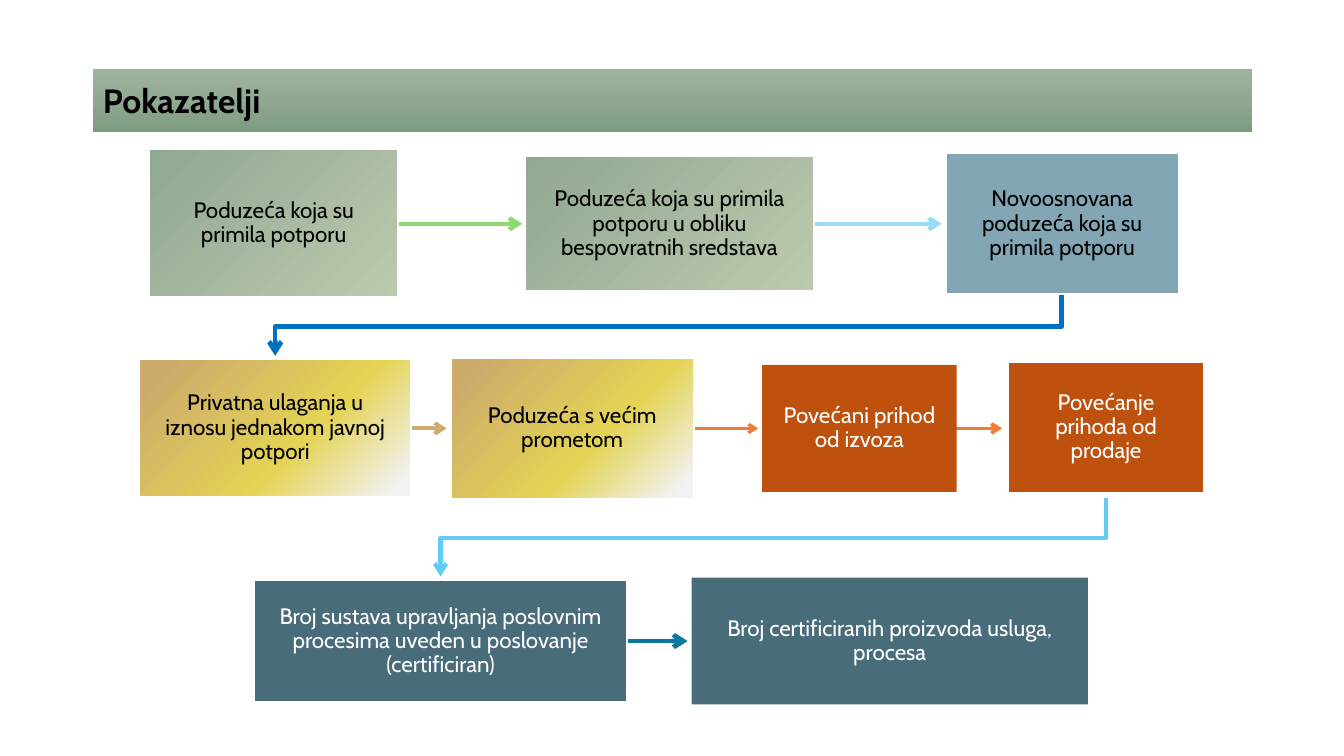
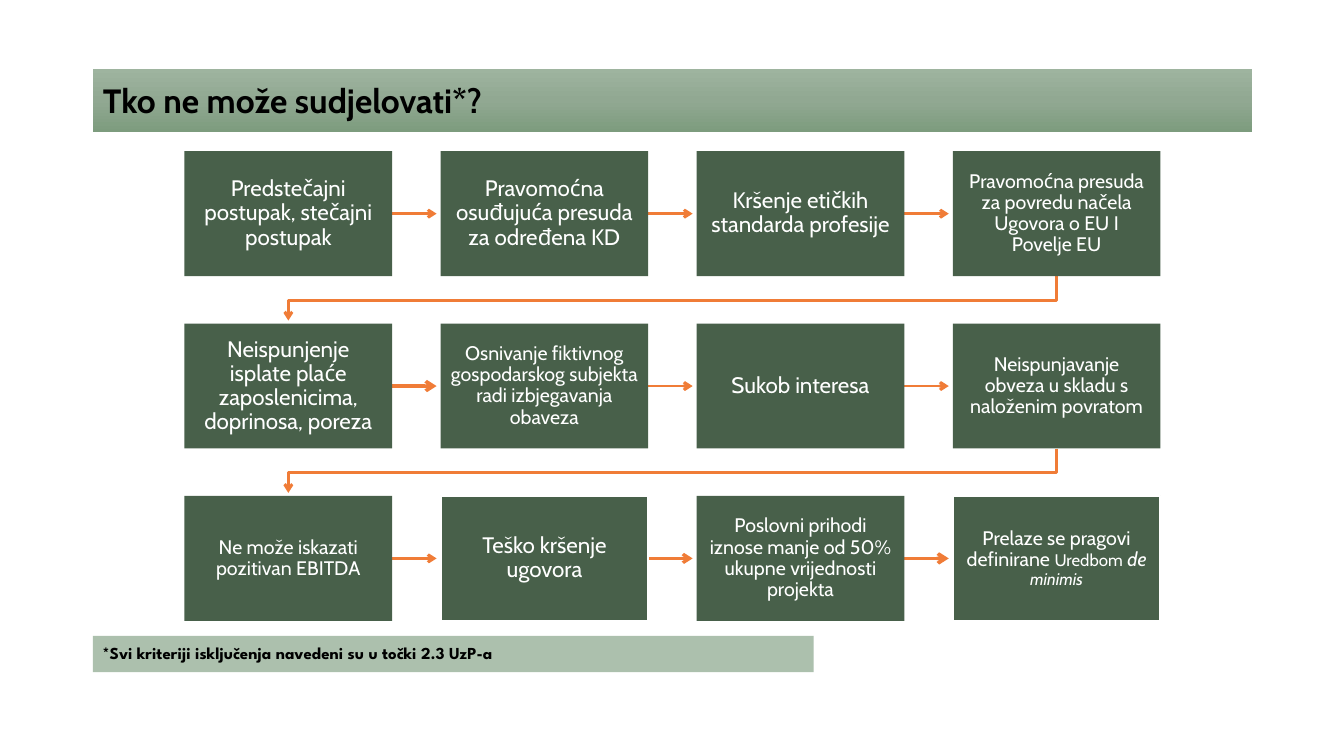
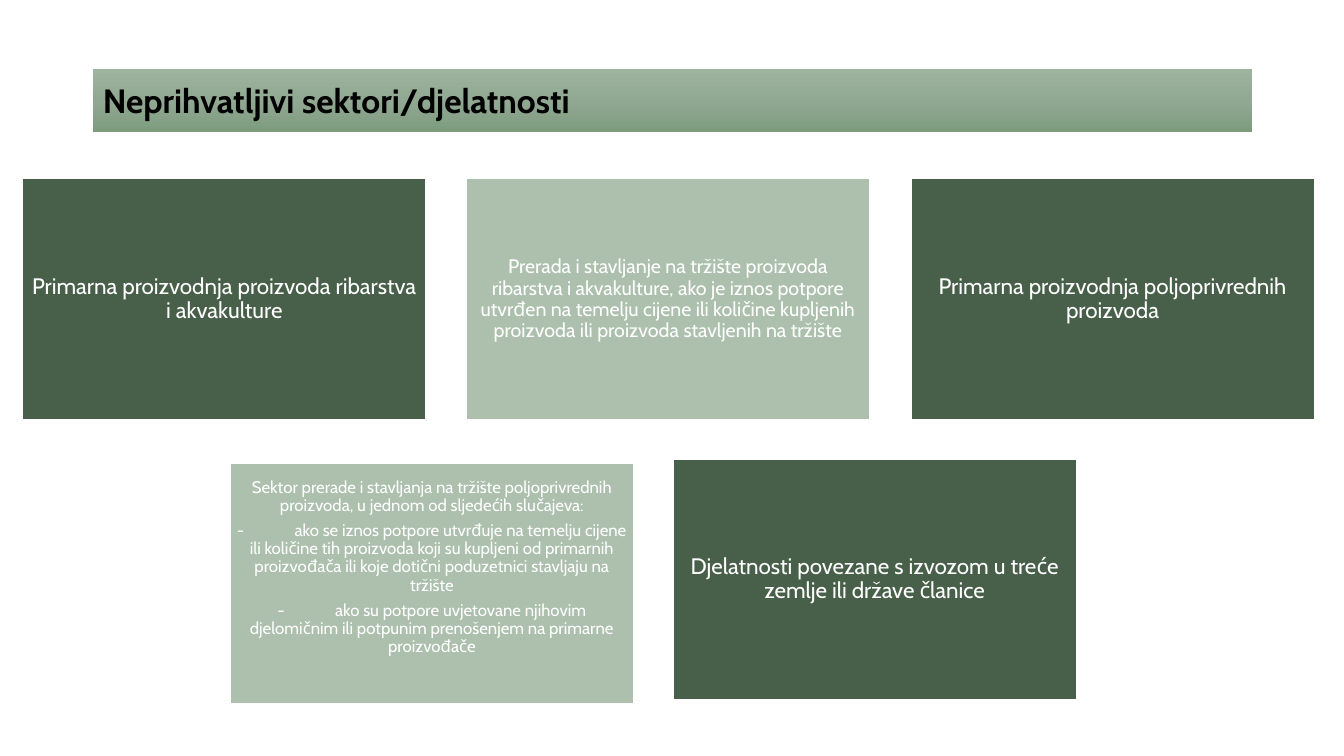
from lxml import etree
from pptx import Presentation
from pptx.dml.color import RGBColor
from pptx.enum.shapes import MSO_CONNECTOR, MSO_SHAPE
from pptx.enum.text import MSO_ANCHOR, MSO_AUTO_SIZE, PP_ALIGN
from pptx.oxml.ns import qn
from pptx.util import Inches, Pt

RECTANGLE = MSO_SHAPE.RECTANGLE
STRAIGHT = MSO_CONNECTOR.STRAIGHT
MIDDLE = MSO_ANCHOR.MIDDLE
NO_AUTOFIT = MSO_AUTO_SIZE.NONE
LEFT, CENTER = PP_ALIGN.LEFT, PP_ALIGN.CENTER

# Shared colours and gradients
BLACK, WHITE = "000000", "FFFFFF"
DARK_GREEN, LIGHT_GREEN = "48604A", "ACC0AD"
ORANGE, RUST, SLATE, BLUE_GREY = "F07C37", "BE510E", "496C7B", "83A6B5"
TITLE_BAND = (90, [(0, "9EB49F"), (50, "91A892"), (100, "7D9C7E")])
SAGE = (45, [(0, "91A892"), (100, "BCCAAE")])
GOLD = (45, [(9, "CDAC6B"), (60, "E4D354"), (94, "F2F2F2")])

TITLE_ONLY = 5
TITLE_BOX = (0.92, 0.68, 11.5, 0.63)
BODY_FONT, NOTE_FONT = "Cabin", "League Spartan"


def rgb(value):
    return RGBColor.from_string(value)


def set_attributes(target, values):
    for name, value in values.items():
        setattr(target, name, value)


def set_fill(shape, fill):
    """Fill with a hex colour, or with (clockwise angle, stops)."""
    if isinstance(fill, str):
        shape.fill.solid()
        shape.fill.fore_color.rgb = rgb(fill)
        return
    angle, stops = fill
    shape.fill.gradient()
    shape.fill.gradient_angle = (360 - angle) % 360
    stop_list = shape.element.spPr.find(".//" + qn("a:gsLst"))
    for old_stop in list(stop_list):
        stop_list.remove(old_stop)
    for position, color in stops:
        stop = etree.SubElement(stop_list, qn("a:gs"), pos=str(position * 1000))
        etree.SubElement(stop, qn("a:srgbClr"), val=color)


def set_border(shape, color, width):
    if width:
        shape.line.color.rgb = rgb(color)
        shape.line.width = Pt(width)
    else:
        shape.line.fill.background()


def add_tab_stop(paragraph, position):
    tab_list = etree.SubElement(paragraph._p.get_or_add_pPr(), qn("a:tabLst"))
    etree.SubElement(tab_list, qn("a:tab"), pos=str(Inches(position)), algn="l")


def write_text(shape, paragraphs, size, color, align=CENTER, bold=False,
               font=BODY_FONT, spacing=0.9, insets=(0.1, 0.05, 0.1, 0.05)):
    """Each paragraph is a string or a list of (text, font overrides)."""
    frame = shape.text_frame
    set_attributes(frame, {"word_wrap": True, "auto_size": NO_AUTOFIT,
                           "vertical_anchor": MIDDLE})
    sides = ("margin_left", "margin_top", "margin_right", "margin_bottom")
    set_attributes(frame, {side: Inches(inset) for side, inset in zip(sides, insets)})
    for index, content in enumerate(paragraphs):
        paragraph = frame.add_paragraph() if index else frame.paragraphs[0]
        set_attributes(paragraph, {"alignment": align, "line_spacing": spacing,
                                   "space_before": Pt(5 if index else 0)})
        runs = [(content, {})] if isinstance(content, str) else content
        if "\t" in runs[0][0]:
            add_tab_stop(paragraph, 0.57)
        for text, overrides in runs:
            run = paragraph.add_run()
            run.text = text
            base = {"name": font, "size": Pt(size), "bold": bold}
            set_attributes(run.font, {**base, **overrides})
            run.font.color.rgb = rgb(color)


def add_box(slide, box, fill, paragraphs, size=16, color=WHITE, border=0, **text_format):
    shape = slide.shapes.add_shape(RECTANGLE, *map(Inches, box))
    shape.shadow.inherit = False
    set_fill(shape, fill)
    set_border(shape, WHITE, border)
    write_text(shape, paragraphs, size, color, **text_format)


def add_arrow(slide, points, color, width):
    """Draw a straight connector, or a bent line through more points."""
    corners = [(Inches(x), Inches(y)) for x, y in points]
    if len(corners) == 2:
        arrow = slide.shapes.add_connector(STRAIGHT, *corners[0], *corners[1])
        etree.SubElement(arrow.element.spPr, qn("a:effectLst"))
    else:
        builder = slide.shapes.build_freeform(*corners[0])
        builder.add_line_segments(corners[1:], close=False)
        arrow = builder.convert_to_shape()
        arrow.fill.background()
        arrow.shadow.inherit = False
    set_border(arrow, color, width)
    line = arrow.element.spPr.find(qn("a:ln"))
    etree.SubElement(line, qn("a:tailEnd"), type="arrow")


def add_bent_arrow(slide, start, middle, end, color, width):
    """Go down, across at height middle, and down again."""
    add_arrow(slide, [start, (start[0], middle), (end[0], middle), end], color, width)


def add_titled_slide(presentation, text):
    slide = presentation.slides.add_slide(presentation.slide_layouts[TITLE_ONLY])
    title = slide.shapes.title
    names = ("left", "top", "width", "height")
    set_attributes(title, dict(zip(names, map(Inches, TITLE_BOX))))
    set_fill(title, TITLE_BAND)
    write_text(title, [text], 24, BLACK, align=LEFT, bold=True, spacing=1.0)
    return slide


def add_indicators(presentation):
    slide = add_titled_slide(presentation, "Pokazatelji")
    # Arrows along the rows: start, end, height, colour, width
    for start, end, y, color, width in [
        (3.95, 5.18, 2.22, "8ED973", 3),
        (8.08, 9.34, 2.22, "96DCF8", 3),
        (4.08, 4.43, 4.25, "CDAC6B", 2.75),
        (6.87, 7.52, 4.25, ORANGE, 2.25),
        (9.48, 9.94, 4.25, ORANGE, 2.5),
        (6.22, 6.82, 6.36, "0B76A0", 3.25),
    ]:
        add_arrow(slide, [(start, y), (end, y)], color, width)
    # Arrows to the next row
    add_bent_arrow(slide, (10.53, 2.92), 3.24, (2.73, 3.53), "0070C0", 3.25)
    add_bent_arrow(slide, (10.97, 4.92), 5.34, (4.37, 5.72), "61CBF4", 3)
    # Steps: box, fill, text colour, border, text
    for box, fill, color, border, text in [
        ((1.48, 1.48, 2.47, 1.47), SAGE, BLACK, 1.5, "Poduzeća koja su primila potporu"),
        ((5.21, 1.55, 2.86, 1.34), SAGE, BLACK, 1.5,
         "Poduzeća koja su primila potporu u obliku bespovratnih sredstava"),
        ((9.38, 1.52, 2.31, 1.4), BLUE_GREY, BLACK, 1.5,
         "Novoosnovana poduzeća koja su primila potporu"),
        ((1.38, 3.56, 2.7, 1.37), GOLD, BLACK, 1.5,
         "Privatna ulaganja u iznosu jednakom javnoj potpori"),
        ((4.47, 3.55, 2.41, 1.4), GOLD, BLACK, 1.5, "Poduzeća s većim prometom"),
        ((7.56, 3.62, 1.93, 1.26), RUST, WHITE, 0, "Povećani prihod od izvoza"),
        ((9.98, 3.57, 1.98, 1.34), RUST, WHITE, 4.5, "Povećanje prihoda od prodaje"),
        ((2.52, 5.75, 3.7, 1.22), SLATE, WHITE, 1.5,
         "Broj sustava upravljanja poslovnim procesima uveden u poslovanje (certificiran)"),
        ((6.86, 5.73, 3.93, 1.26), SLATE, WHITE, 0,
         "Broj certificiranih proizvoda usluga, procesa"),
    ]:
        add_box(slide, box, fill, [text], color=color, border=border,
                insets=(0.18, 0.19, 0.18, 0.19))


def add_exclusions(presentation):
    slide = add_titled_slide(presentation, "Tko ne može sudjelovati*?")
    left, top, width, height = 1.83, 1.5, 2.06, 1.24
    column_step, row_step = 2.54, 1.71
    thresholds = [("Prelaze se pragovi definirane ", {}), ("Uredbom", {"size": Pt(12)}),
                  (" ", {}), ("de ", {"italic": True}),
                  ("minimis", {"italic": True, "size": Pt(12)})]
    rows = [
        [("Predstečajni postupak, stečajni postupak", 16),
         ("Pravomoćna osuđujuća presuda za određena KD", 16),
         ("Kršenje etičkih standarda profesije", 16),
         ("Pravomoćna presuda za povredu načela Ugovora o EU I Povelje EU", 14)],
        [("Neispunjenje isplate plaće zaposlenicima, doprinosa, poreza", 16),
         ("Osnivanje fiktivnog gospodarskog subjekta radi izbjegavanja obaveza", 14),
         ("Sukob interesa", 16),
         ("Neispunjavanje obveza u skladu s naloženim povratom", 14)],
        [("Ne može iskazati pozitivan EBITDA", 14),
         ("Teško kršenje ugovora", 16),
         ("Poslovni prihodi iznose manje od 50% ukupne vrijednosti projekta", 14),
         (thresholds, 14)],
    ]
    arrow_widths = {(1, 0): 2.5, (2, 1): 2.25, (2, 2): 2.5}
    bordered = {(2, 1), (2, 3)}
    for row, cells in enumerate(rows):
        y = top + row * row_step
        for column, (text, size) in enumerate(cells):
            x = left + column * column_step
            cell = (row, column)
            if column < len(cells) - 1:
                center = y + height / 2
                add_arrow(slide, [(x + width, center), (x + column_step - 0.04, center)],
                          ORANGE, arrow_widths.get(cell, 2))
            elif row < len(rows) - 1:
                add_bent_arrow(slide, (x + width / 2, y + height), y + height + 0.24,
                               (left + width / 2, y + row_step - 0.03), ORANGE, 2)
            add_box(slide, (x, y, width, height), DARK_GREEN, [text], size,
                    border=1.5 if cell in bordered else 0,
                    insets=(0.1, 0.11, 0.1, 0.11))
    # Footnote
    add_box(slide, (0.92, 6.31, 7.15, 0.36), LIGHT_GREEN,
            ["*Svi kriteriji isključenja navedeni su u točki 2.3 UzP-a"], 12, BLACK,
            align=LEFT, bold=True, font=NOTE_FONT)


def add_sectors(presentation):
    slide = add_titled_slide(presentation, "Neprihvatljivi sektori/djelatnosti")
    width, height = 4.01, 2.4
    even = (0.07, 0.07, 0.07, 0.07)
    raised = (0.05, 0.05, 0.05, 0.37)
    # Sectors: left, top, fill, size, insets, paragraphs
    for left, top, fill, size, insets, paragraphs in [
        (0.22, 1.77, DARK_GREEN, 16, even,
         ["Primarna proizvodnja proizvoda ribarstva i akvakulture"]),
        (4.62, 1.77, LIGHT_GREEN, 14, even,
         ["Prerada i stavljanje na tržište proizvoda ribarstva i akvakulture, ako je iznos "
          "potpore utvrđen na temelju cijene ili količine kupljenih proizvoda ili proizvoda "
          "stavljenih na tržište"]),
        (9.03, 1.77, DARK_GREEN, 16, even,
         ["Primarna proizvodnja poljoprivrednih proizvoda"]),
        (2.28, 4.59, LIGHT_GREEN, 12, raised,
         ["Sektor prerade i stavljanja na tržište poljoprivrednih proizvoda, u jednom od "
          "sljedećih slučajeva:",
          "-\tako se iznos potpore utvrđuje na temelju cijene ili količine tih proizvoda koji "
          "su kupljeni od primarnih proizvođača ili koje dotični poduzetnici stavljaju na "
          "tržište",
          "-\tako su potpore uvjetovane njihovim djelomičnim ili potpunim prenošenjem na "
          "primarne proizvođače"]),
        (6.67, 4.55, DARK_GREEN, 16, even,
         ["Djelatnosti povezane s izvozom u treće zemlje ili države članice"]),
    ]:
        add_box(slide, (left, top, width, height), fill, paragraphs, size,
                border=1.5, insets=insets)


def main():
    presentation = Presentation()
    presentation.slide_width = Inches(13.33)
    presentation.slide_height = Inches(7.5)
    add_indicators(presentation)
    add_exclusions(presentation)
    add_sectors(presentation)
    presentation.save("out.pptx")


if __name__ == "__main__":
    main()
